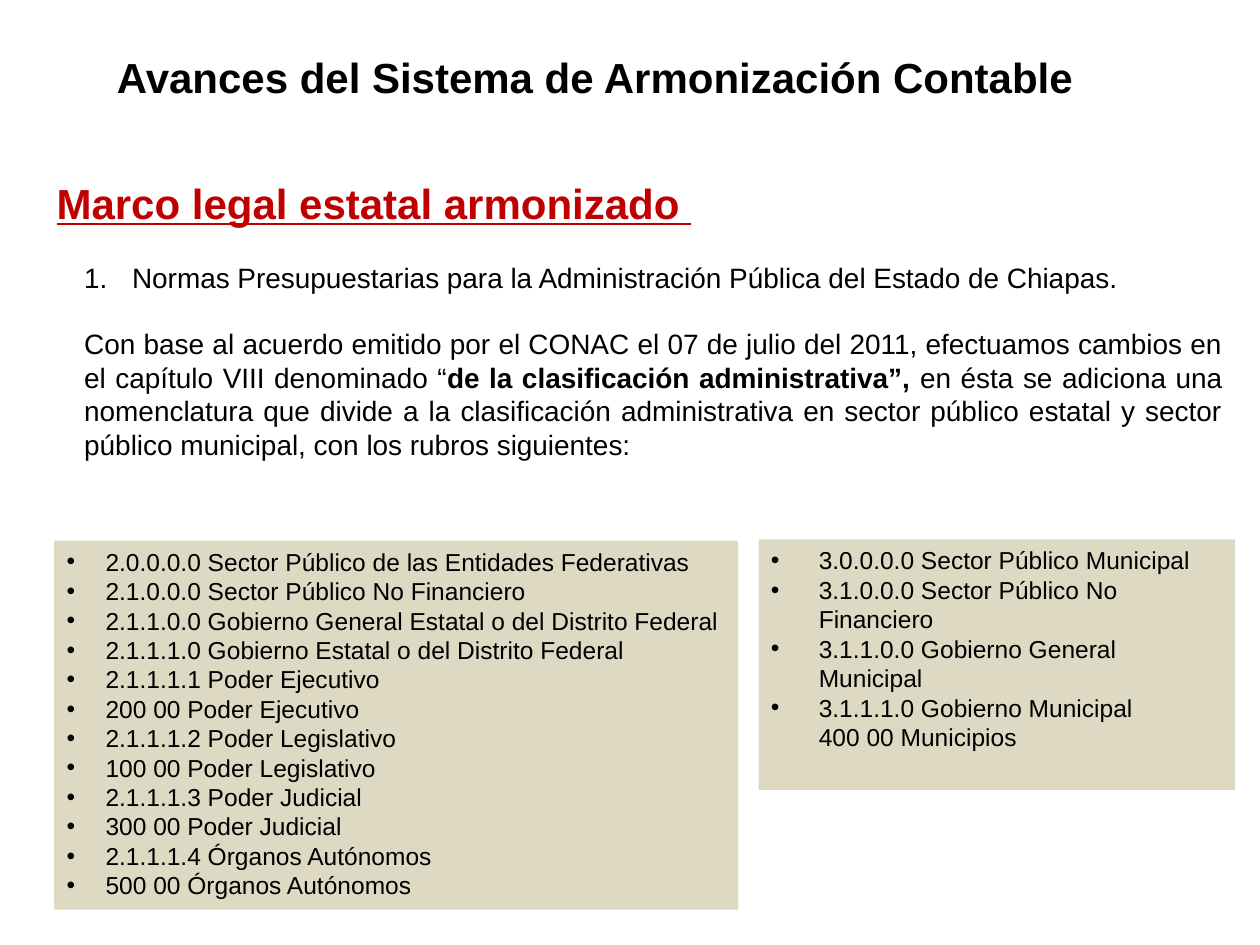
from lxml import etree
from pptx import Presentation
from pptx.dml.color import RGBColor
from pptx.enum.shapes import MSO_SHAPE
from pptx.enum.text import MSO_ANCHOR, PP_ALIGN
from pptx.oxml.ns import qn
from pptx.util import Inches, Pt

LEFT, JUST = PP_ALIGN.LEFT, PP_ALIGN.JUSTIFY
TOP, RECT = MSO_ANCHOR.TOP, MSO_SHAPE.RECTANGLE
HUES = {"ink": "000000", "red": "C00000", "sand": "DDD9C3"}
FONT = "Arial"

deck = Presentation()
deck.slide_width, deck.slide_height = Inches(10), Inches(7.5)
slide = deck.slides.add_slide(deck.slide_layouts[6])


def write(frame, parts, size=14, hue="ink", bold=False, line=False,
          align=LEFT, mark=None, dent=0, gap=0):
    """Add one paragraph; parts are strings, or (string, bold) pairs."""
    para = frame.paragraphs[0]
    if para.runs:
        para = frame.add_paragraph()
    props = para._p.get_or_add_pPr()
    if mark:
        props.set("marL", str(Inches(dent)))
        props.set("indent", str(-Inches(dent)))
        etree.SubElement(props, qn("a:buFont")).set("typeface", FONT)
        if mark == "1.":
            etree.SubElement(props, qn("a:buAutoNum")).set("type", "arabicPeriod")
        else:
            etree.SubElement(props, qn("a:buChar")).set("char", mark)
    para.alignment = align
    para.space_before = Pt(gap)
    for part in parts:
        text, heavy = part if isinstance(part, tuple) else (part, bold)
        if text == "\n":
            para.add_line_break()
            continue
        run = para.add_run()
        run.text = text
        font = run.font
        font.name, font.size = FONT, Pt(size)
        font.bold, font.underline = heavy, line
        font.color.rgb = RGBColor.from_string(HUES[hue])


def place(left, top, wide, high, fill=None):
    """Add a text area, with a filled panel behind it if asked."""
    area = [Inches(n) for n in (left, top, wide, high)]
    if fill:
        shape = slide.shapes.add_shape(RECT, *area)
        shape.shadow.inherit = False
        shape.fill.solid()
        shape.fill.fore_color.rgb = RGBColor.from_string(HUES[fill])
        shape.line.fill.background()
    else:
        shape = slide.shapes.add_textbox(*area)
    frame = shape.text_frame
    frame.word_wrap = True
    frame.vertical_anchor = TOP
    return frame


# Title and section heading
write(place(0.83, 0.36, 8.82, 0.5),
      ["Avances del Sistema de Armonización Contable"], size=24, bold=True)
write(place(0.35, 1.36, 7.01, 0.5), ["Marco legal estatal armonizado "],
      size=24, hue="red", bold=True, line=True)

# Numbered rule and its explanation
body = place(0.57, 2.02, 9.23, 1.95)
write(body, ["Normas Presupuestarias para la Administración Pública del Estado "
             "de Chiapas."], size=16, align=JUST, mark="1.", dent=0.38)
write(body, [
    "Con base al acuerdo emitido por el CONAC el 07 de julio del 2011, "
    "efectuamos cambios en el capítulo VIII denominado “",
    ("de la clasificación administrativa”, ", True),
    "en ésta se adiciona una nomenclatura que divide a la clasificación "
    "administrativa en sector público estatal y sector público municipal, "
    "con los rubros siguientes:"], size=16, align=JUST, gap=18.4)

# Panels: state sector, then municipal sector
state = [
    ["2.0.0.0.0 Sector Público de las Entidades Federativas"],
    ["2.1.0.0.0 Sector Público No Financiero"],
    ["2.1.1.0.0 Gobierno General Estatal o del Distrito Federal"],
    ["2.1.1.1.0 Gobierno Estatal o del Distrito Federal"],
    ["2.1.1.1.1 Poder Ejecutivo"],
    ["200 00 Poder Ejecutivo"],
    ["2.1.1.1.2 Poder Legislativo"],
    ["100 00 Poder Legislativo"],
    ["2.1.1.1.3 Poder Judicial"],
    ["300 00 Poder Judicial"],
    ["2.1.1.1.4 Órganos Autónomos"],
    ["500 00 Órganos Autónomos"],
]
town = [
    ["3.0.0.0.0 Sector Público Municipal"],
    ["3.1.0.0.0 Sector Público No Financiero"],
    ["3.1.1.0.0 Gobierno General Municipal"],
    ["3.1.1.1.0 Gobierno Municipal", "\n", "400 00 Municipios"],
]
for area, dent, items in (((0.43, 4.29, 5.43, 2.93), 0.31, state),
                          ((6.02, 4.28, 3.78, 1.99), 0.38, town)):
    panel = place(*area, fill="sand")
    for item in items:
        write(panel, item, mark="•", dent=dent)

deck.save("out.pptx")
